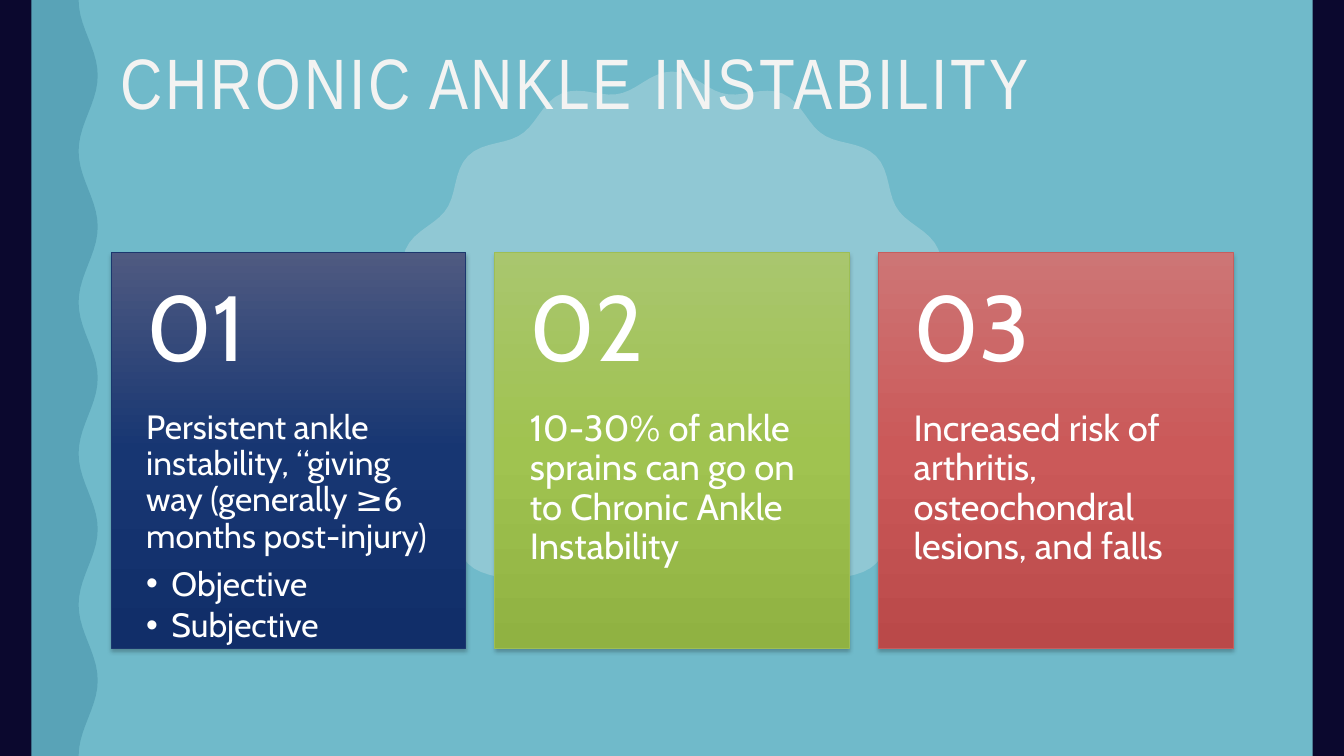
import math
from dataclasses import dataclass
from typing import Any

import lxml.etree
import pptx
import pptx.dml.color
import pptx.enum.shapes
import pptx.enum.text
import pptx.oxml
import pptx.oxml.ns
import pptx.util

Pt = pptx.util.Pt
RGB = pptx.dml.color.RGBColor.from_string
ANCHOR = pptx.enum.text.MSO_ANCHOR
LEFT = pptx.enum.text.PP_ALIGN.LEFT
RECT = pptx.enum.shapes.MSO_SHAPE.RECTANGLE
QN = pptx.oxml.ns.qn
NS = 'xmlns:a="http://schemas.openxmlformats.org/drawingml/2006/main"'
WIDTH, HEIGHT = pptx.util.Inches(13.33), pptx.util.Inches(7.5)

COLORS = {
    "paper": "F3F3F2",
    "night": "0B082E",
    "lagoon": "62B4C6",
    "white": "FFFFFF",
    "shadow": "000000",
}


@dataclass(frozen=True)
class Box:
    """Left, top, width and height in percent of the slide."""
    x: float
    y: float
    w: float
    h: float


@dataclass(frozen=True)
class Card:
    number: str
    text: str
    size: int
    stops: tuple[str, str, str]
    line: str
    bullets: tuple[str, ...] = ()


CARDS = [
    Card("01", "Persistent ankle instability, “giving way (generally ≥6 months post-injury)",
         24, ("4F5A81", "173672", "112E69"), "1B376E", ("Objective", "Subjective")),
    Card("02", "10-30% of ankle sprains can go on to Chronic Ankle Instability",
         26, ("A9C66E", "A0C350", "90B242"), "9EBE55"),
    Card("03", "Increased risk of arthritis, osteochondral lesions, and falls",
         26, ("CD7575", "CB5959", "BA4949"), "C65E5E"),
]
FIRST_CARD = Box(8.25, 33.33, 26.4, 52.4)
CARD_STEP = 28.55
NUMBER_HEIGHT = 20.93
EDGE = 2.33


def across(share: float) -> int:
    return round(WIDTH * share / 100)


def down(share: float) -> int:
    return round(HEIGHT * share / 100)


def place(box: Box) -> tuple[int, int, int, int]:
    return across(box.x), down(box.y), across(box.w), down(box.h)


def apply(target: Any, values: dict[str, Any]) -> None:
    for name, value in values.items():
        setattr(target, name, value)


def paint(sp: Any, color: str, opacity: int = 100) -> None:
    sp.shadow.inherit = False
    sp.line.fill.background()
    sp.fill.solid()
    sp.fill.fore_color.rgb = RGB(COLORS[color])
    if opacity < 100:
        clr = sp.element.spPr.find(".//" + QN("a:srgbClr"))
        lxml.etree.SubElement(clr, QN("a:alpha")).set("val", str(opacity * 1000))


def add_rect(s: Any, box: Box, color: str, opacity: int = 100) -> None:
    paint(s.shapes.add_shape(RECT, *place(box)), color, opacity)


def add_outline(s: Any, points: list[tuple[int, int]], color: str, opacity: int = 100) -> None:
    builder = s.shapes.build_freeform(*points[0], scale=1.0)
    builder.add_line_segments(points[1:], close=True)
    paint(builder.convert_to_shape(), color, opacity)


def add_wave(s: Any) -> None:
    crest = [(across(6.56 - 0.71 * math.cos(math.tau * y / 20)), down(y)) for y in range(101)]
    add_outline(s, [(0, 0), *crest, (0, HEIGHT)], "night")


def add_badge(s: Any) -> None:
    points = []
    for step in range(240):
        angle = math.tau * step / 240
        radius = 37 + 1.13 * math.cos(16 * angle)
        points.append((across(50) + down(radius * math.sin(angle)),
                       down(47.6 - radius * math.cos(angle))))
    add_outline(s, points, "paper", 25)


def add_panel(s: Any, box: Box, card: Card) -> None:
    sp = s.shapes.add_shape(RECT, *place(box))
    apply(sp.line, {"width": Pt(0.5)})
    sp.line.color.rgb = RGB(card.line)
    stops = "".join(f'<a:gs pos="{i * 50000}"><a:srgbClr val="{color}"/></a:gs>'
                    for i, color in enumerate(card.stops))
    sp.element.spPr.find(QN("a:prstGeom")).addnext(pptx.oxml.parse_xml(
        f'<a:gradFill {NS} rotWithShape="1"><a:gsLst>{stops}</a:gsLst>'
        '<a:lin ang="5400000" scaled="0"/></a:gradFill>'))
    sp.element.spPr.append(pptx.oxml.parse_xml(
        f'<a:effectLst {NS}><a:outerShdw blurRad="{Pt(3)}" dist="{Pt(2)}" dir="5400000" '
        f'algn="ctr" rotWithShape="0"><a:srgbClr val="{COLORS["shadow"]}">'
        '<a:alpha val="25000"/></a:srgbClr></a:outerShdw></a:effectLst>'))


def format_frame(tf: Any, anchor: Any, top: float, bottom: float) -> None:
    apply(tf, {
        "word_wrap": True, "auto_size": pptx.enum.text.MSO_AUTO_SIZE.NONE,
        "vertical_anchor": anchor,
        "margin_left": across(2.63), "margin_right": across(2.63),
        "margin_top": down(top), "margin_bottom": down(bottom),
    })


def write(p: Any, text: str, size: int, after: float, bullet: bool = False) -> None:
    pPr = p._p.get_or_add_pPr()
    hang = across(1.88) if bullet else 0
    pPr.set("marL", str(hang))
    pPr.set("indent", str(-hang))
    if bullet:
        lxml.etree.SubElement(pPr, QN("a:buFont")).set("typeface", "Arial")
        lxml.etree.SubElement(pPr, QN("a:buChar")).set("char", "•")
    else:
        lxml.etree.SubElement(pPr, QN("a:buNone"))
    apply(p, {"level": int(bullet), "alignment": LEFT, "line_spacing": 0.9,
              "space_before": Pt(0), "space_after": Pt(size * after)})
    r = p.add_run()
    r.text = text
    apply(r.font, {"name": "Cabin", "size": Pt(size)})
    r.font.color.rgb = RGB(COLORS["white"])


def add_card(s: Any, index: int, card: Card, body: Any) -> None:
    box = Box(FIRST_CARD.x + index * CARD_STEP, FIRST_CARD.y, FIRST_CARD.w, FIRST_CARD.h)
    text_box = Box(box.x, box.y + NUMBER_HEIGHT, box.w, box.h - NUMBER_HEIGHT)
    add_panel(s, box, card)
    if card.bullets:
        sp = body
        s.shapes.element.append(sp.element)
        apply(sp, dict(zip(("left", "top", "width", "height"), place(text_box))))
    else:
        sp = s.shapes.add_textbox(*place(text_box))
    tf = sp.text_frame
    format_frame(tf, ANCHOR.TOP, 0, 4.8)
    write(tf.paragraphs[0], card.text, card.size, 0.35)
    for bullet in card.bullets:
        write(tf.add_paragraph(), bullet, card.size, 0.15, True)

    tf = s.shapes.add_textbox(*place(Box(box.x, box.y, box.w, NUMBER_HEIGHT))).text_frame
    format_frame(tf, ANCHOR.MIDDLE, 2.4, 2.4)
    write(tf.paragraphs[0], card.number, 66, 0.35)


def add_title(s: Any, text: str) -> None:
    sp = s.shapes.title
    s.shapes.element.append(sp.element)
    apply(sp, dict(zip(("left", "top", "width", "height"), place(Box(8.25, 5.6, 83.5, 21.73)))))
    tf = sp.text_frame
    apply(tf, {"word_wrap": True, "vertical_anchor": ANCHOR.TOP,
               "auto_size": pptx.enum.text.MSO_AUTO_SIZE.NONE})
    p = tf.paragraphs[0]
    apply(p, {"alignment": LEFT, "line_spacing": 0.9})
    r = p.add_run()
    r.text = text
    apply(r.font, {"name": "Arial Narrow", "size": Pt(51)})
    r.font.color.rgb = RGB(COLORS["paper"])
    r._r.get_or_add_rPr().set("spc", "200")


def main() -> None:
    prs = pptx.Presentation()
    apply(prs, {"slide_width": WIDTH, "slide_height": HEIGHT})
    s = prs.slides.add_slide(prs.slide_layouts[1])
    s.background.fill.solid()
    s.background.fill.fore_color.rgb = RGB(COLORS["paper"])
    add_wave(s)
    add_rect(s, Box(0, 0, 100, 100), "lagoon", 90)
    add_rect(s, Box(0, 0, EDGE, 100), "night")
    add_badge(s)
    add_title(s, "CHRONIC ANKLE INSTABILITY")
    add_rect(s, Box(100 - EDGE, 0, EDGE, 100), "night")
    body = s.placeholders[1]
    for index, card in enumerate(CARDS):
        add_card(s, index, card, body)
    prs.save("out.pptx")


if __name__ == "__main__":
    main()
